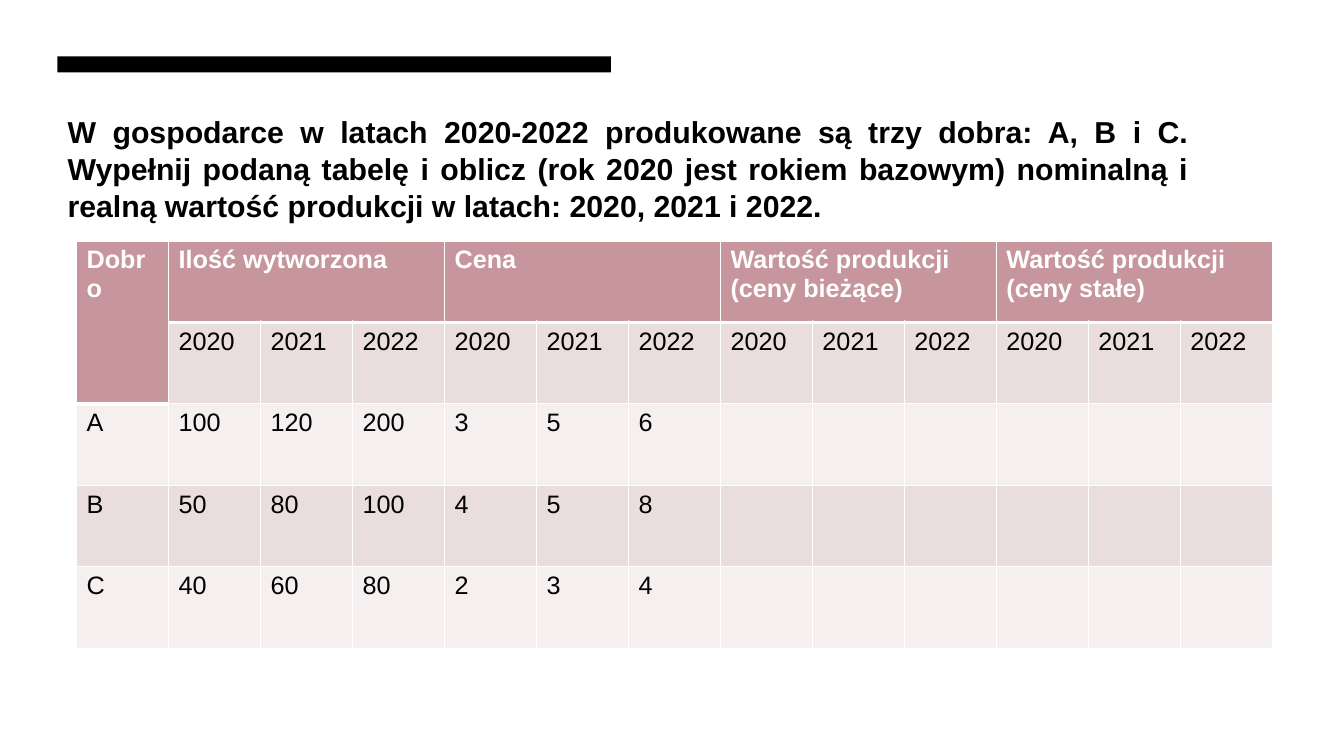
from lxml import etree
from pptx import Presentation
from pptx import util as u
from pptx.dml.color import RGBColor
from pptx.enum import shapes, text
from pptx.oxml.ns import qn

COLORS = {
    "black": "000000",
    "white": "FFFFFF",
    "header": "C6969C",
    "dark_band": "EADDDE",
    "light_band": "F5EFEF",
}
YEARS = ["2020", "2021", "2022"]
GROUPS = [
    "Ilość wytworzona",
    "Cena",
    "Wartość produkcji (ceny bieżące)",
    "Wartość produkcji (ceny stałe)",
]
GOODS = [
    ["A", "100", "120", "200", "3", "5", "6"],
    ["B", "50", "80", "100", "4", "5", "8"],
    ["C", "40", "60", "80", "2", "3", "4"],
]
TITLE = (
    "W gospodarce w latach 2020-2022 produkowane są trzy dobra: A, B i C. "
    "Wypełnij podaną tabelę i oblicz (rok 2020 jest rokiem bazowym) nominalną i "
    "realną wartość produkcji w latach: 2020, 2021 i 2022."
)


class SlideBuilder:
    font = "Arial"

    def __init__(self, deck):
        self.page = deck.slides.add_slide(deck.slide_layouts[5])

    def color(self, name):
        return RGBColor.from_string(COLORS[name])

    def add_span(self, para, words, size, color, bold=False):
        span = para.add_run()
        span.text = words
        span.font.name = self.font
        span.font.size = u.Pt(size)
        span.font.bold = bold
        span.font.color.rgb = self.color(color)

    def title(self, words, left, top, width, height):
        box = self.page.shapes.title
        box.left, box.top = u.Inches(left), u.Inches(top)
        box.width, box.height = u.Inches(width), u.Inches(height)
        frame = box.text_frame
        frame.word_wrap = True
        frame.auto_size = text.MSO_AUTO_SIZE.NONE
        frame.vertical_anchor = text.MSO_ANCHOR.MIDDLE
        para = frame.paragraphs[0]
        para.alignment = text.PP_ALIGN.JUSTIFY
        para.line_spacing = 1.03
        self.add_span(para, words, 21.6, "black", True)

    def bar(self, left, top, width, height, color):
        bar = self.page.shapes.add_shape(
            shapes.MSO_SHAPE.RECTANGLE,
            u.Inches(left), u.Inches(top), u.Inches(width), u.Inches(height))
        bar.shadow.inherit = False
        bar.fill.solid()
        bar.fill.fore_color.rgb = self.color(color)
        bar.line.fill.background()

    def table(self, rows, columns, left, top, width, height):
        table = self.page.shapes.add_table(
            rows, columns,
            u.Inches(left), u.Inches(top), u.Inches(width), u.Inches(height)).table
        table.first_row = False
        table.horz_banding = False
        return table

    def cell(self, cell, words, fill, color="black", bold=False):
        cell.fill.solid()
        cell.fill.fore_color.rgb = self.color(fill)
        if words:
            self.add_span(cell.text_frame.paragraphs[0], words, 18, color, bold)

    def borders(self, cell, top, bottom):
        properties = cell._tc.get_or_add_tcPr()
        widths = {"a:lnL": 1, "a:lnR": 1, "a:lnT": top, "a:lnB": bottom}
        for index, (side, width) in enumerate(widths.items()):
            line = etree.Element(qn(side), w=str(u.Pt(width)))
            fill = etree.SubElement(line, qn("a:solidFill"))
            etree.SubElement(fill, qn("a:srgbClr"), val=COLORS["white"])
            properties.insert(index, line)


def production_table(builder):
    columns = 1 + len(GROUPS) * len(YEARS)
    header = ["Dobro"] + [name for group in GROUPS for name in (group, "", "")]
    rows = [header, [""] + YEARS * len(GROUPS)]
    rows += [good + [""] * (columns - len(good)) for good in GOODS]
    table = builder.table(len(rows), columns, 0.76, 2.39, 11.86, 4.04)

    for row, values in enumerate(rows):
        for column, words in enumerate(values):
            cell = table.cell(row, column)
            is_header = row == 0 or (row == 1 and column == 0)
            if is_header:
                builder.cell(cell, words, "header", "white", True)
            else:
                builder.cell(cell, words, "dark_band" if row % 2 else "light_band")
            below_header = row == 1 or (row == 2 and column == 0)
            builder.borders(cell, 3 if below_header else 1, 3 if is_header else 1)

    table.cell(0, 0).merge(table.cell(1, 0))
    for column in range(1, columns, len(YEARS)):
        table.cell(0, column).merge(table.cell(0, column + len(YEARS) - 1))


def main():
    deck = Presentation()
    deck.slide_width, deck.slide_height = u.Inches(13.33), u.Inches(7.5)
    builder = SlideBuilder(deck)
    builder.bar(0.57, 0.56, 5.49, 0.16, "black")
    builder.title(TITLE, 0.57, 1.07, 11.32, 1.19)
    production_table(builder)
    deck.save("out.pptx")


if __name__ == "__main__":
    main()
